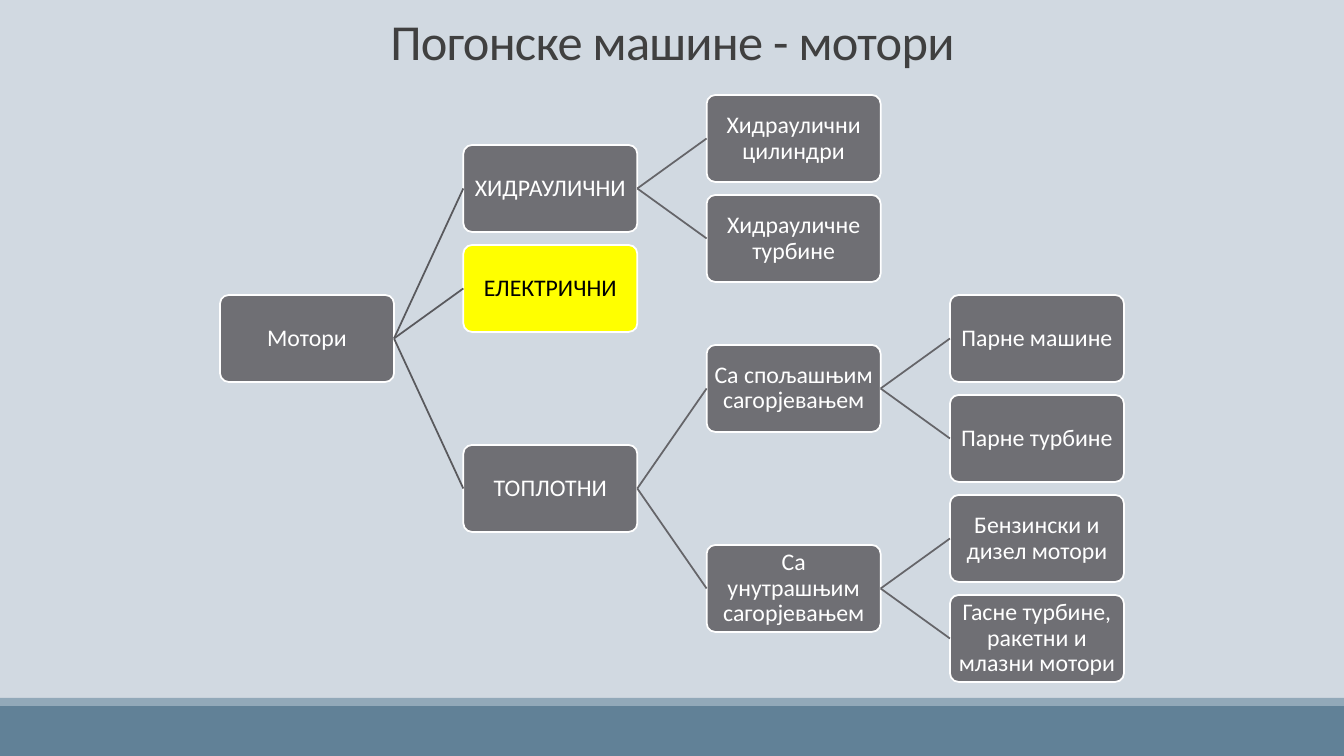
from dataclasses import dataclass

from lxml import etree
from pptx import Presentation
from pptx.dml.color import RGBColor
from pptx.enum.shapes import MSO_CONNECTOR, MSO_SHAPE
from pptx.enum.text import MSO_ANCHOR, PP_ALIGN
from pptx.oxml.ns import qn
from pptx.util import Emu, Pt

RECT = MSO_SHAPE.RECTANGLE
ROUND = MSO_SHAPE.ROUNDED_RECTANGLE
STRAIGHT = MSO_CONNECTOR.STRAIGHT
MIDDLE = MSO_ANCHOR.MIDDLE
BOTTOM = MSO_ANCHOR.BOTTOM
CENTER = PP_ALIGN.CENTER

PX = 914400 / 100.8
WIDE, HIGH = 1344, 756
NODE_W, NODE_H = 174, 87
LAST_COL, LAST_ROW = 3, 5
LEFT_SITE, RIGHT_SITE = 1, 3


@dataclass(frozen=True)
class Theme:
    """Colours and type sizes of the slide."""
    back: str = "D1D9E1"
    band: str = "618197"
    stripe: str = "92A9B9"
    title: str = "404040"
    node: str = "6F6F74"
    text: str = "FFFFFF"
    edge: str = "FFFFFF"
    mark: str = "FFFF00"
    mark_text: str = "000000"
    root_link: str = "59595D"
    link: str = "656569"
    font: str = "Calibri"
    title_size: int = 36
    node_size: int = 17
    line: float = 1.25


THEME = Theme()
MARKED = "ЕЛЕКТРИЧНИ"

TREE = ("Мотори", [
    ("ХИДРАУЛИЧНИ", [
        ("Хидраулични цилиндри", 0),
        ("Хидрауличне турбине", 1),
    ]),
    (MARKED, 1.5),
    ("ТОПЛОТНИ", [
        ("Са спољашњим сагорјевањем", [
            ("Парне машине", 2),
            ("Парне турбине", 3),
        ]),
        ("Са унутрашњим сагорјевањем", [
            ("Бензински и дизел мотори", 4),
            ("Гасне турбине, ракетни и млазни мотори", 5),
        ]),
    ]),
])


def px(*sizes):
    """Turn pixel lengths into EMU."""
    return [Emu(round(size * PX)) for size in sizes]


def rgb(code):
    """Turn a hex code into a colour."""
    return RGBColor.from_string(code)


def apply(item, **form):
    """Set each format value on the item."""
    for name, value in form.items():
        setattr(item, name, value)


def write(shape, text, size, color, anchor, pads, leading):
    """Put one centred paragraph into the shape and return its run."""
    frame = shape.text_frame
    sides = ("margin_left", "margin_top", "margin_right", "margin_bottom")
    apply(frame, word_wrap=True, vertical_anchor=anchor,
          **dict(zip(sides, px(*pads))))
    para = frame.paragraphs[0]
    apply(para, alignment=CENTER, line_spacing=leading)
    run = para.add_run()
    run.text = text
    apply(run.font, name=THEME.font, size=Pt(size))
    run.font.color.rgb = rgb(color)
    return run


def block(slide, kind, box, fill):
    """Draw a filled shape without shadow or outline."""
    shape = slide.shapes.add_shape(kind, *px(*box))
    shape.shadow.inherit = False
    shape.fill.solid()
    shape.fill.fore_color.rgb = rgb(fill)
    shape.line.fill.background()
    return shape


def footer(slide, box):
    """Draw the stripe and the band under it."""
    left, top, width, height = box
    thin = 8
    block(slide, RECT, (left, top + thin, width, height - thin), THEME.band)
    block(slide, RECT, (left, top, width, thin), THEME.stripe)


def heading(slide, box):
    """Write the slide title."""
    shape = slide.shapes.add_textbox(*px(*box))
    run = write(shape, "Погонске машине - мотори", THEME.title_size,
                THEME.title, BOTTOM, (10, 5, 10, 5), 0.85)
    run.font._element.set("spc", "-50")


def find_row(node):
    """Give a leaf's row, or the middle of a node's outer children."""
    kids = node[1]
    if isinstance(kids, list):
        return (find_row(kids[0]) + find_row(kids[-1])) / 2
    return kids


def link(slide, start, end, color):
    """Join the right side of one node to the left side of another."""
    line = slide.shapes.add_connector(STRAIGHT, 0, 0, 0, 0)
    line.begin_connect(start, RIGHT_SITE)
    line.end_connect(end, LEFT_SITE)
    line.line.width = Pt(THEME.line)
    line.line.color.rgb = rgb(color)
    etree.SubElement(line._element.spPr, qn("a:effectLst"))


def branch(slide, box, node, col=0):
    """Draw a node with all its children and return its shape."""
    left, top, width, height = box
    text, kids = node
    x = left + col * (width - NODE_W) / LAST_COL
    y = top + find_row(node) * (height - NODE_H) / LAST_ROW
    fill, ink = THEME.node, THEME.text
    if text == MARKED:
        fill, ink = THEME.mark, THEME.mark_text
    shape = block(slide, ROUND, (x, y, NODE_W, NODE_H), fill)
    shape.adjustments[0] = 0.1
    shape.line.color.rgb = rgb(THEME.edge)
    shape.line.width = Pt(THEME.line)
    write(shape, text, THEME.node_size, ink, MIDDLE, (4, 4, 4, 4), 0.9)
    if isinstance(kids, list):
        color = THEME.link if col else THEME.root_link
        for kid in kids:
            link(slide, shape, branch(slide, box, kid, col + 1), color)
    return shape


def main():
    """Build the slide and save it."""
    deck = Presentation()
    deck.slide_width, deck.slide_height = px(WIDE, HIGH)
    slide = deck.slides.add_slide(deck.slide_layouts[6])
    slide.background.fill.solid()
    slide.background.fill.fore_color.rgb = rgb(THEME.back)
    footer(slide, (0, 698, WIDE, HIGH - 698))
    heading(slide, (210, 9, 925, 67))
    branch(slide, (220, 95, 904, 587), TREE)
    deck.save("out.pptx")


if __name__ == "__main__":
    main()
